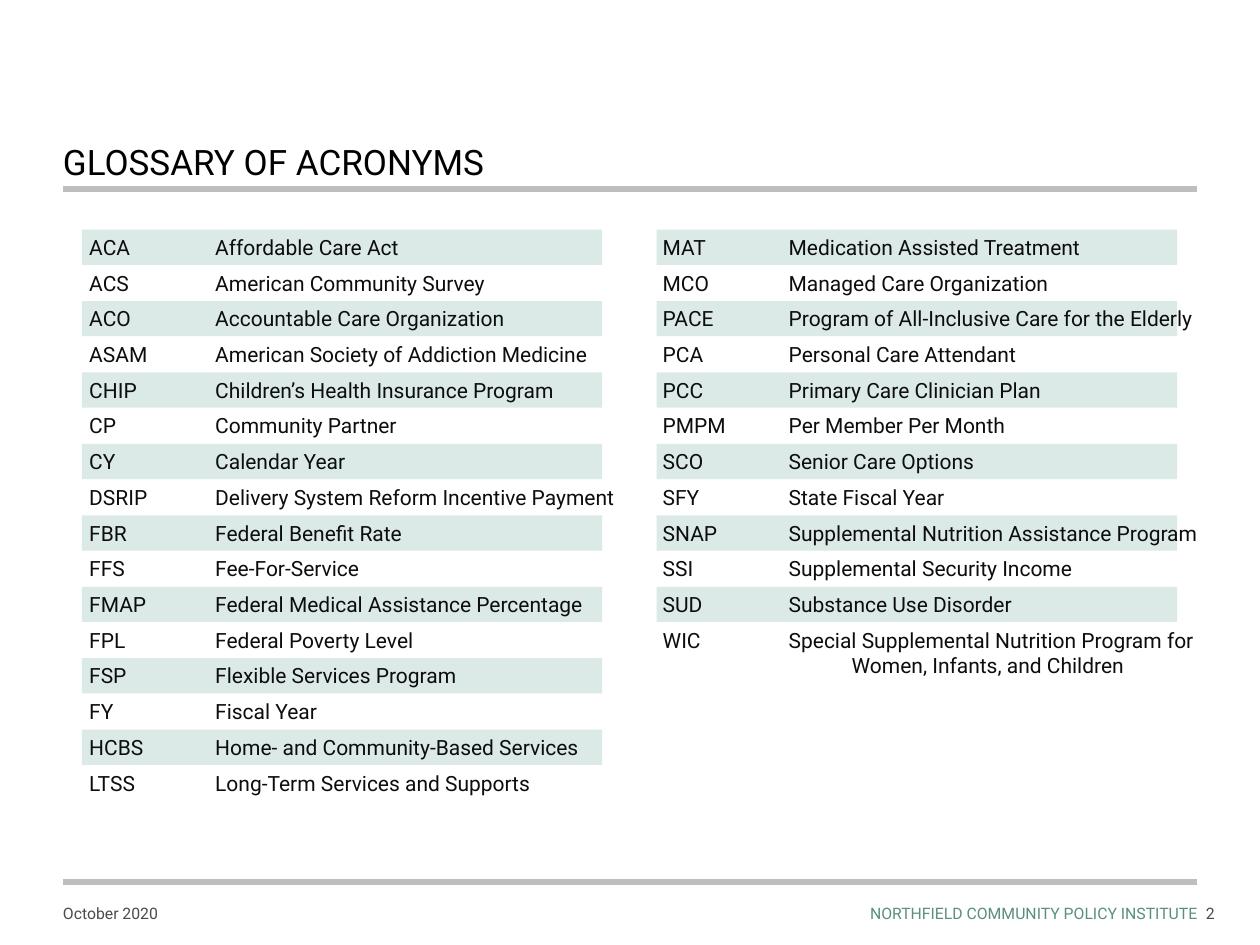
from lxml import etree
from pptx import Presentation
from pptx import util as u
from pptx.dml.color import RGBColor
from pptx.enum import shapes, text
from pptx.oxml.ns import qn

COLORS = {
    "rule": "BEBEBE",
    "band": "DCEAE7",
    "title": "000000",
    "body": "0D0D0D",
    "footer": "4B4B4B",
    "institute": "5A8F7C",
}
FONT = "Roboto"
MARGIN, CONTENT_WIDTH = 1.27, 22.86
BAND_TOP, BAND_STEP = 4.63, 1.44
BAND_COLUMNS = [(1.65, 8), (13.24, 6)]  # left edge, number of bands
HANGING = u.Cm(2.54)

GLOSSARY = [
    ("ACA", "Affordable Care Act"),
    ("ACS", "American Community Survey"),
    ("ACO", "Accountable Care Organization"),
    ("ASAM", "American Society of Addiction Medicine"),
    ("CHIP", "Children’s Health Insurance Program"),
    ("CP", "Community Partner"),
    ("CY", "Calendar Year"),
    ("DSRIP", "Delivery System Reform Incentive Payment"),
    ("FBR", "Federal Benefit Rate"),
    ("FFS", "Fee-For-Service"),
    ("FMAP", "Federal Medical Assistance Percentage"),
    ("FPL", "Federal Poverty Level"),
    ("FSP", "Flexible Services Program"),
    ("FY", "Fiscal Year"),
    ("HCBS", "Home- and Community-Based Services"),
    ("LTSS", "Long-Term Services and Supports"),
    ("MAT", "Medication Assisted Treatment"),
    ("MCO", "Managed Care Organization"),
    ("PACE", "Program of All-Inclusive Care for the Elderly"),
    ("PCA", "Personal Care Attendant"),
    ("PCC", "Primary Care Clinician Plan"),
    ("PMPM", "Per Member Per Month"),
    ("SCO", "Senior Care Options"),
    ("SFY", "State Fiscal Year"),
    ("SNAP", "Supplemental Nutrition Assistance Program"),
    ("SSI", "Supplemental Security Income"),
    ("SUD", "Substance Use Disorder"),
    ("WIC", "Special Supplemental Nutrition Program for \tWomen, Infants, and Children"),
]


def color(name):
    return RGBColor.from_string(COLORS[name])


def add_rule(slide, top):
    rule = slide.shapes.add_connector(
        shapes.MSO_CONNECTOR.STRAIGHT,
        u.Cm(MARGIN), u.Cm(top), u.Cm(MARGIN + CONTENT_WIDTH), u.Cm(top))
    rule.line.color.rgb = color("rule")
    rule.line.width = u.Pt(3)
    etree.SubElement(rule._element.spPr, qn("a:effectLst"))


def add_band(slide, left, top):
    band = slide.shapes.add_shape(
        shapes.MSO_SHAPE.RECTANGLE, u.Cm(left), u.Cm(top), u.Cm(10.49), u.Cm(0.71))
    band.shadow.inherit = False
    band.fill.solid()
    band.fill.fore_color.rgb = color("band")
    band.line.fill.background()


def add_frame(slide, left, top, width, height):
    frame = slide.shapes.add_textbox(
        u.Cm(left), u.Cm(top), u.Cm(width), u.Cm(height)).text_frame
    frame.word_wrap = True
    return frame


def add_run(paragraph, content, size, color_name):
    run = paragraph.add_run()
    run.text = content
    run.font.name = FONT
    run.font.size = u.Pt(size)
    run.font.color.rgb = color(color_name)


def add_title(slide, content):
    frame = add_frame(slide, MARGIN, 1.52, CONTENT_WIDTH, 2.29)
    frame.margin_left = frame.margin_right = 0
    frame.vertical_anchor = text.MSO_ANCHOR.BOTTOM
    add_run(frame.paragraphs[0], content, 20, "title")


def add_footer(slide, content, left, width, color_name="footer", align=text.PP_ALIGN.LEFT):
    frame = add_frame(slide, left, 18.21, width, 0.81)
    frame.margin_left = frame.margin_right = frame.margin_top = frame.margin_bottom = 0
    frame.paragraphs[0].alignment = align
    add_run(frame.paragraphs[0], content, 9, color_name)


def set_hanging_indent(paragraph):
    """Hang the acronym to the left, so that its tab ends at the definition."""
    properties = paragraph._p.get_or_add_pPr()
    properties.set("marL", str(HANGING))
    properties.set("indent", str(-HANGING))


def add_glossary(slide):
    frame = add_frame(slide, 1.55, 4.6, CONTENT_WIDTH, 12.14)
    body = frame._txBody.bodyPr
    body.set("numCol", "2")
    body.set("spcCol", str(u.Cm(0.76)))
    for index, (acronym, meaning) in enumerate(GLOSSARY):
        entry = frame.add_paragraph() if index else frame.paragraphs[0]
        entry.space_before = u.Pt(6)
        set_hanging_indent(entry)
        add_run(entry, f"{acronym}\t{meaning}", 12, "body")


def main():
    deck = Presentation()
    deck.slide_width, deck.slide_height = u.Cm(25.4), u.Cm(19.05)
    slide = deck.slides.add_slide(deck.slide_layouts[6])

    for top in (17.78, 3.81):
        add_rule(slide, top)
    for left, count in BAND_COLUMNS:
        for row in range(count):
            add_band(slide, left, BAND_TOP + row * BAND_STEP)

    add_title(slide, "GLOSSARY OF ACRONYMS")
    add_glossary(slide)
    add_footer(slide, "October 2020", MARGIN, 4.22)
    add_footer(slide, "NORTHFIELD COMMUNITY POLICY INSTITUTE", 13.18, 10.95,
               "institute", text.PP_ALIGN.RIGHT)
    add_footer(slide, "2", 24.31, 1.09)
    deck.save("out.pptx")


if __name__ == "__main__":
    main()
